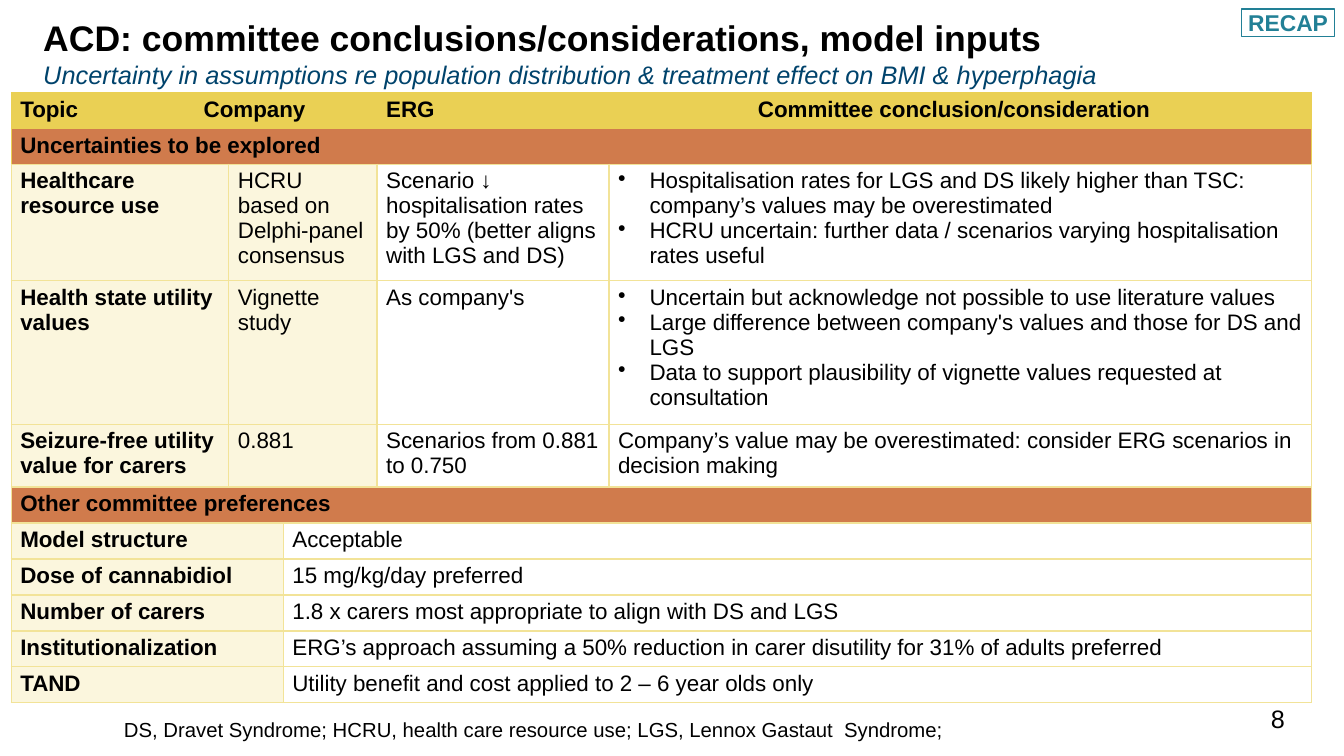
"""Build the committee conclusions slide with its table of model inputs."""
from lxml.etree import SubElement
from pptx import Presentation
from pptx.dml.color import RGBColor
from pptx.enum.shapes import MSO_SHAPE
from pptx.enum.text import MSO_ANCHOR, PP_ALIGN
from pptx.oxml.ns import qn
from pptx.util import Pt

GOLD, PALE_GOLD, CREAM = "EAD054", "F2E398", "FBF6DD"
ORANGE, WHITE, BLACK = "D07B4C", "FFFFFF", "000000"
NAVY, TEAL = "00436C", "228096"

COLUMNS = [131, 24.5, 38.9, 67, 165.6, 100, 401.8]
HEADER = ["Topic", "Company", "ERG", "Committee conclusion/consideration"]
UNCERTAINTIES = [
    (77.1, ["Healthcare resource use",
            "HCRU based on Delphi-panel consensus",
            "Scenario ↓ hospitalisation rates by 50% (better aligns with LGS and DS)",
            ["Hospitalisation rates for LGS and DS likely higher than TSC: "
             "company’s values may be overestimated",
             "HCRU uncertain: further data / scenarios varying hospitalisation rates useful"]]),
    (95.7, ["Health state utility values",
            "Vignette study",
            "As company's",
            ["Uncertain but acknowledge not possible to use literature values",
             "Large difference between company's values and those for DS and LGS",
             "Data to support plausibility of vignette values requested at consultation"]]),
    (42.6, ["Seizure-free utility value for carers",
            "0.881",
            "Scenarios from 0.881 to 0.750",
            "Company’s value may be overestimated: consider ERG scenarios in decision making"]),
]
PREFERENCES = [
    ["Model structure", "Acceptable"],
    ["Dose of cannabidiol", "15 mg/kg/day preferred"],
    ["Number of carers", "1.8 x carers most appropriate to align with DS and LGS"],
    ["Institutionalization",
     "ERG’s approach assuming a 50% reduction in carer disutility for 31% of adults preferred"],
    ["TAND", "Utility benefit and cost applied to 2 – 6 year olds only"],
]


def rgb(value):
    return RGBColor.from_string(value)


class SlideBuilder:
    def __init__(self, prs, font="Arial"):
        self.s = prs.slides.add_slide(prs.slide_layouts[6])
        self.font_name = font

    def style(self, font, size, color=BLACK, bold=False, italic=False):
        font.name, font.size = self.font_name, Pt(size)
        font.bold, font.italic = bold, italic
        font.color.rgb = rgb(color)

    def text(self, box, text, size):
        tf = self.s.shapes.add_textbox(*map(Pt, box)).text_frame
        tf.word_wrap = True
        p = tf.paragraphs[0]
        p.text = text
        self.style(p.font, size)

    def title(self, box, heading, subtitle):
        tf = self.s.shapes.add_textbox(*map(Pt, box)).text_frame
        tf.word_wrap = True
        p = tf.paragraphs[0]
        p.line_spacing = Pt(21.8)
        r = p.add_run()
        r.text = heading
        self.style(r.font, 25.4, bold=True)
        p.add_line_break()
        r = p.add_run()
        r.text = subtitle
        self.style(r.font, 18.1, NAVY, italic=True)

    def tag(self, box, text):
        sp = self.s.shapes.add_shape(MSO_SHAPE.RECTANGLE, *map(Pt, box))
        sp.shadow.inherit = False
        sp.fill.solid()
        sp.fill.fore_color.rgb = rgb(WHITE)
        sp.line.color.rgb = rgb(TEAL)
        sp.line.width = Pt(1)
        tf = sp.text_frame
        tf.word_wrap = False
        tf.vertical_anchor = MSO_ANCHOR.MIDDLE
        tf.margin_left = Pt(4.5)
        tf.margin_right = tf.margin_top = tf.margin_bottom = 0
        p = tf.paragraphs[0]
        p.text = text
        p.alignment = PP_ALIGN.LEFT
        self.style(p.font, 16.3, TEAL, bold=True)

    def table(self, left, top, columns, rows):
        heights = [height for height, _, _ in rows]
        frame = self.s.shapes.add_table(
            len(rows), len(columns), Pt(left), Pt(top), Pt(sum(columns)), Pt(sum(heights)))
        table = frame.table
        table.horz_banding = False
        for column, width in zip(table.columns, columns):
            column.width = Pt(width)
        for i, (height, border, cells) in enumerate(rows):
            table.rows[i].height = Pt(height)
            start = 0
            for content, span, fill, bold in cells:
                for j in range(start, start + span):
                    self.paint(table.cell(i, j), fill, border)
                cell = table.cell(i, start)
                if span > 1:
                    cell.merge(table.cell(i, start + span - 1))
                self.cell_text(cell, content, bold)
                start += span

    def paint(self, cell, fill, border):
        color, width = border
        tc_pr = cell._tc.get_or_add_tcPr()
        for side in ("a:lnL", "a:lnR", "a:lnT", "a:lnB"):
            ln = SubElement(tc_pr, qn(side), w=str(Pt(width)))
            SubElement(SubElement(ln, qn("a:solidFill")), qn("a:srgbClr"), val=color)
        cell.fill.solid()
        cell.fill.fore_color.rgb = rgb(fill)

    def cell_text(self, cell, content, bold):
        cell.margin_left = cell.margin_right = Pt(6.5)
        cell.margin_top = cell.margin_bottom = Pt(3.25)
        bulleted = isinstance(content, list)
        tf = cell.text_frame
        for n, line in enumerate(content if bulleted else [content]):
            p = tf.add_paragraph() if n else tf.paragraphs[0]
            p.text = line
            self.style(p.font, 16, bold=bold)
            if bulleted:
                self.bullet(p)

    def bullet(self, p):
        p_pr = p._p.get_or_add_pPr()
        p_pr.set("marL", str(Pt(22.5)))
        p_pr.set("indent", str(-Pt(22.5)))
        bullet = SubElement(p_pr, qn("a:buChar"), char="•")
        p_pr.insert(0, bullet)


def make_row(height, texts, spans, fills, bolds, border=(PALE_GOLD, 1)):
    return height, border, list(zip(texts, spans, fills, bolds))


def table_rows():
    single = 24.3
    rows = [make_row(single, HEADER, [1, 3, 2, 1], [GOLD] * 4, [True] * 4, (GOLD, 0.5)),
            make_row(25, ["Uncertainties to be explored"], [7], [ORANGE], [True], (GOLD, 0.5))]
    rows += [make_row(height, texts, [2, 2, 1, 2], [CREAM, CREAM, WHITE, WHITE],
                      [True, False, False, False]) for height, texts in UNCERTAINTIES]
    rows.append(make_row(single, ["Other committee preferences"], [7], [ORANGE], [True]))
    rows += [make_row(single, texts, [3, 4], [CREAM, WHITE], [True, False])
             for texts in PREFERENCES]
    return rows


def main():
    prs = Presentation()
    prs.slide_width, prs.slide_height = Pt(960), Pt(540)
    slide = SlideBuilder(prs)
    slide.text((81.4, 509, 755.3, 25.2),
               "DS, Dravet Syndrome; HCRU, health care resource use; "
               "LGS, Lennox Gastaut  Syndrome;", 14.5)
    slide.title((23.8, 16.6, 830.9, 56.9),
                "ACD: committee conclusions/considerations, model inputs",
                "Uncertainty in assumptions re population distribution "
                "& treatment effect on BMI & hyperphagia")
    slide.table(8, 66, COLUMNS, table_rows())
    slide.text((900.7, 499, 36, 23.8), "8", 18)
    slide.tag((887, 6.5, 66.2, 19.5), "RECAP")
    prs.save("out.pptx")


if __name__ == "__main__":
    main()
